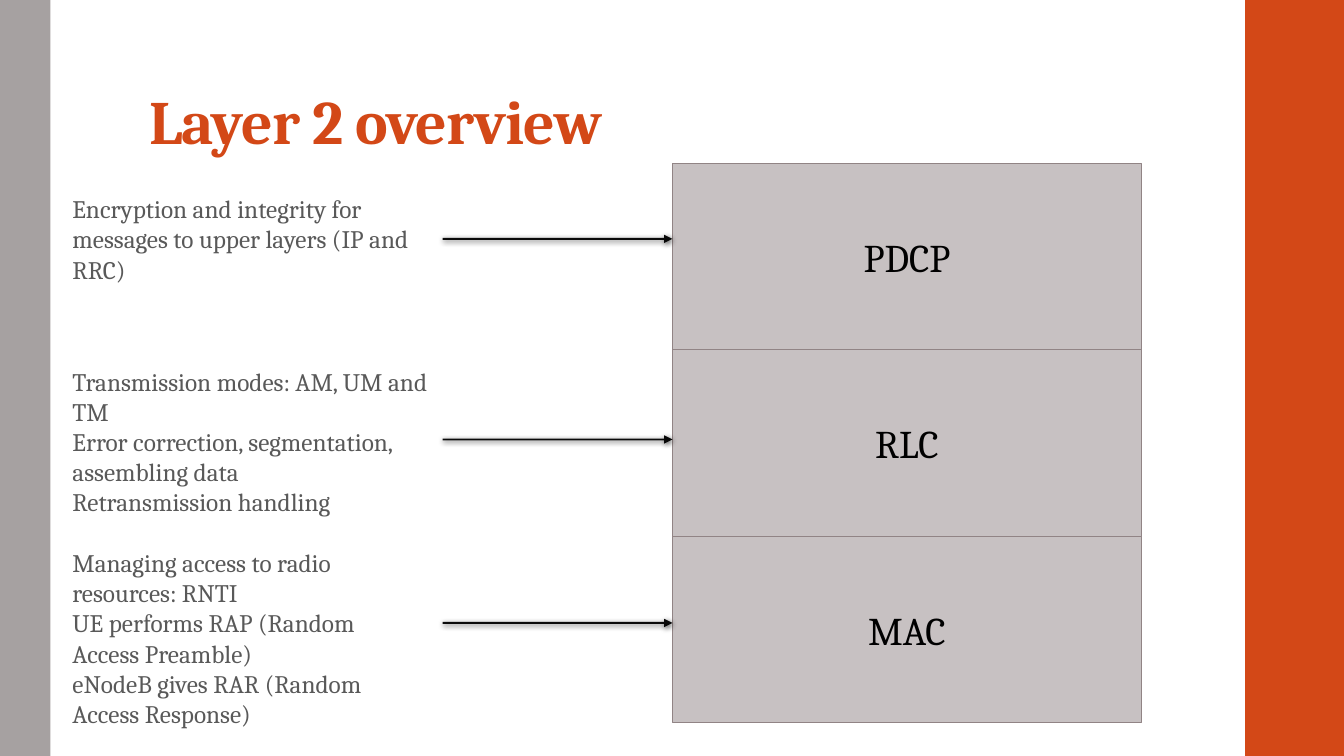
"""Build the Layer 2 overview slide: a protocol stack with explained layers."""
from dataclasses import dataclass

from lxml.etree import SubElement
from pptx import Presentation
from pptx.dml.color import RGBColor
from pptx.enum.shapes import MSO_CONNECTOR, MSO_SHAPE
from pptx.enum.text import MSO_ANCHOR, MSO_AUTO_SIZE, PP_ALIGN
from pptx.oxml import parse_xml
from pptx.oxml.ns import nsdecls, qn
from pptx.shapes.autoshape import Shape
from pptx.slide import Slide
from pptx.util import Inches, Pt

FONT = "Cambria"
ORANGE = RGBColor(0xD3, 0x48, 0x17)
SIDE_GRAY = RGBColor(0xA6, 0xA1, 0xA1)
LAYER_FILL = RGBColor(0xC7, 0xC1, 0xC2)
LAYER_LINE = RGBColor(0x91, 0x84, 0x85)
TEXT_GRAY = RGBColor(0x59, 0x59, 0x59)
BLACK = RGBColor(0, 0, 0)

SLIDE_WIDTH, SLIDE_HEIGHT = 13.33, 7.5
STACK_LEFT, STACK_TOP = 6.67, 1.62
LAYER_WIDTH, LAYER_HEIGHT = 4.65, 1.85
ARROW_LEFT = 4.39
NOTE_LEFT = 0.62

ARROW_SHADOW = (
    f'<a:effectLst {nsdecls("a")}>'
    '<a:outerShdw blurRad="50800" dist="15240" dir="5400000" rotWithShape="0">'
    '<a:srgbClr val="000000"><a:alpha val="75000"/></a:srgbClr>'
    "</a:outerShdw></a:effectLst>"
)


@dataclass(frozen=True)
class Layer:
    name: str
    arrow_y: float
    note_top: float
    note_width: float
    note_height: float
    notes: tuple[str, ...]


LAYERS = (
    Layer("PDCP", 2.37, 1.87, 3.64, 1.01, (
        "Encryption and integrity for messages to upper layers (IP and RRC)",
    )),
    Layer("RLC", 4.36, 3.58, 4.01, 1.62, (
        "Transmission modes: AM, UM and TM",
        "Error correction, segmentation, assembling data",
        "Retransmission handling",
    )),
    Layer("MAC", 6.18, 5.38, 3.64, 2.22, (
        "Managing access to radio resources: RNTI",
        "UE performs RAP (Random Access Preamble)",
        "eNodeB gives RAR (Random Access Response)",
    )),
)


def add_rectangle(slide: Slide, left: float, top: float, width: float,
                  height: float, color: RGBColor) -> Shape:
    shape = slide.shapes.add_shape(
        MSO_SHAPE.RECTANGLE,
        Inches(left), Inches(top), Inches(width), Inches(height))
    shape.shadow.inherit = False
    shape.fill.solid()
    shape.fill.fore_color.rgb = color
    shape.line.fill.background()
    return shape


def format_title(slide: Slide, text: str) -> None:
    title = slide.shapes.title
    title.left, title.top = Inches(1.38), Inches(0.09)
    title.width, title.height = Inches(10.6), Inches(1.53)
    frame = title.text_frame
    frame.text = text
    frame.word_wrap = True
    frame.auto_size = MSO_AUTO_SIZE.NONE
    frame.vertical_anchor = MSO_ANCHOR.BOTTOM
    frame.margin_left = frame.margin_right = Inches(0.1)
    frame.margin_top, frame.margin_bottom = Inches(0.03), Inches(0.05)
    paragraph = frame.paragraphs[0]
    paragraph.alignment = PP_ALIGN.LEFT
    paragraph.line_spacing = 0.9
    font = paragraph.font
    font.name, font.size, font.bold = FONT, Pt(44), True
    font.color.rgb = ORANGE
    paragraph.runs[0].font._element.set("spc", "-50")


def add_layer_box(slide: Slide, layer: Layer, top: float) -> None:
    box = add_rectangle(
        slide, STACK_LEFT, top, LAYER_WIDTH, LAYER_HEIGHT, LAYER_FILL)
    box.line.color.rgb = LAYER_LINE
    box.line.width = Pt(0.75)
    frame = box.text_frame
    frame.text = layer.name
    frame.vertical_anchor = MSO_ANCHOR.MIDDLE
    paragraph = frame.paragraphs[0]
    paragraph.alignment = PP_ALIGN.CENTER
    paragraph.font.name, paragraph.font.size = FONT, Pt(28)
    paragraph.font.color.rgb = BLACK


def add_arrow(slide: Slide, y: float) -> None:
    arrow = slide.shapes.add_connector(
        MSO_CONNECTOR.STRAIGHT,
        Inches(ARROW_LEFT), Inches(y), Inches(STACK_LEFT), Inches(y))
    arrow.line.color.rgb = BLACK
    arrow.line.width = Pt(1.35)
    properties = arrow._element.spPr
    line = properties.find(qn("a:ln"))
    color = line.find(qn("a:solidFill")).find(qn("a:srgbClr"))
    SubElement(color, qn("a:alpha"), val="95000")
    SubElement(line, qn("a:tailEnd"), type="triangle")
    properties.append(parse_xml(ARROW_SHADOW))


def add_notes_box(slide: Slide, layer: Layer) -> None:
    box = slide.shapes.add_textbox(
        Inches(NOTE_LEFT), Inches(layer.note_top),
        Inches(layer.note_width), Inches(layer.note_height))
    frame = box.text_frame
    frame.text = "\n".join(layer.notes)
    frame.word_wrap = True
    frame.auto_size = MSO_AUTO_SIZE.SHAPE_TO_FIT_TEXT
    for paragraph in frame.paragraphs:
        paragraph.font.name, paragraph.font.size = FONT, Pt(18)
        paragraph.font.color.rgb = TEXT_GRAY


def main() -> None:
    presentation = Presentation()
    presentation.slide_width = Inches(SLIDE_WIDTH)
    presentation.slide_height = Inches(SLIDE_HEIGHT)
    slide = presentation.slides.add_slide(presentation.slide_layouts[5])
    add_rectangle(slide, 12.35, 0, SLIDE_WIDTH - 12.35, SLIDE_HEIGHT, ORANGE)
    add_rectangle(slide, 0, 0, 0.5, SLIDE_HEIGHT, SIDE_GRAY)
    format_title(slide, "Layer 2 overview")
    for index, layer in enumerate(LAYERS):
        add_layer_box(slide, layer, STACK_TOP + index * LAYER_HEIGHT)
        add_arrow(slide, layer.arrow_y)
        add_notes_box(slide, layer)
    presentation.save("out.pptx")


if __name__ == "__main__":
    main()
